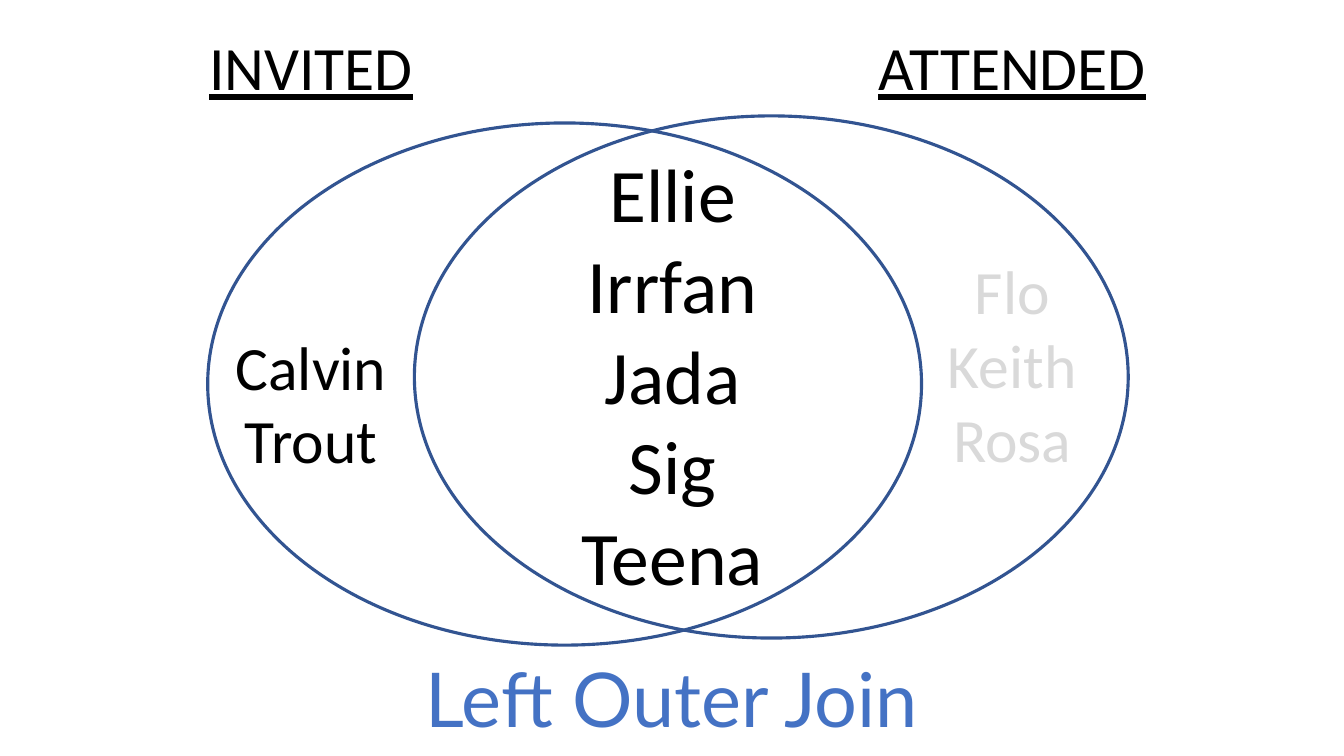
from dataclasses import dataclass

from pptx import Presentation
from pptx.dml.color import RGBColor
from pptx.enum.shapes import MSO_SHAPE
from pptx.enum.text import MSO_AUTO_SIZE, PP_ALIGN
from pptx.slide import Slide
from pptx.util import Inches, Pt

BLACK = RGBColor(0x00, 0x00, 0x00)
FADED = RGBColor(0xD9, 0xD9, 0xD9)
BLUE = RGBColor(0x44, 0x72, 0xC4)
OUTLINE = RGBColor(0x32, 0x54, 0x91)

LINE_HEIGHT = 1.22  # Calibri line pitch relative to its size
OVAL_SIZE = (7.08, 5.18)


@dataclass
class Label:
    left: float
    top: float
    width: float
    height: float
    lines: list[str]
    size: int
    color: RGBColor = BLACK
    font: str = "Calibri"
    heading: str = ""
    gap_lines: int = 0  # empty line heights between heading and lines


@dataclass
class Oval:
    left: float
    top: float


LABELS = [
    Label(8.6, 0.24, 2.88, 4.54, ["Flo", "Keith", "Rosa"], 44, FADED,
          heading="ATTENDED", gap_lines=2),
    Label(1.96, 0.24, 2.25, 4.54, ["Calvin", "Trout"], 44,
          heading="INVITED", gap_lines=3),
    Label(5.66, 1.41, 2.02, 4.64, ["Ellie", "Irrfan", "Jada", "Sig", "Teena"], 54),
]
OVALS = [Oval(2.06, 1.22), Oval(4.11, 1.15)]
TITLE = Label(3.45, 6.42, 6.43, 1.01, ["Left Outer Join"], 54, BLUE, "Lato")


def add_label(page: Slide, label: Label) -> None:
    box = page.shapes.add_textbox(Inches(label.left), Inches(label.top),
                                  Inches(label.width), Inches(label.height))
    frame = box.text_frame
    frame.word_wrap = False
    frame.auto_size = MSO_AUTO_SIZE.SHAPE_TO_FIT_TEXT
    headings = [label.heading] if label.heading else []
    frame.text = "\n".join(headings + label.lines)
    for para in frame.paragraphs:
        para.alignment = PP_ALIGN.CENTER
        para.font.name = label.font
        para.font.size = Pt(label.size)
        para.font.color.rgb = label.color
    if headings:
        heading, first = frame.paragraphs[:2]
        heading.font.underline = True
        heading.font.color.rgb = BLACK
        first.space_before = Pt(label.gap_lines * label.size * LINE_HEIGHT)


def add_oval(page: Slide, oval: Oval) -> None:
    width, height = OVAL_SIZE
    shape = page.shapes.add_shape(MSO_SHAPE.OVAL, Inches(oval.left), Inches(oval.top),
                                  Inches(width), Inches(height))
    shape.shadow.inherit = False
    shape.fill.background()
    shape.line.color.rgb = OUTLINE
    shape.line.width = Pt(2.25)


def main() -> None:
    deck = Presentation()
    deck.slide_width, deck.slide_height = Inches(13.33), Inches(7.5)
    page = deck.slides.add_slide(deck.slide_layouts[6])

    # Names in each region
    for label in LABELS:
        add_label(page, label)
    # Overlapping sets
    for oval in OVALS:
        add_oval(page, oval)
    # Name of the join
    add_label(page, TITLE)

    deck.save("out.pptx")


if __name__ == "__main__":
    main()
